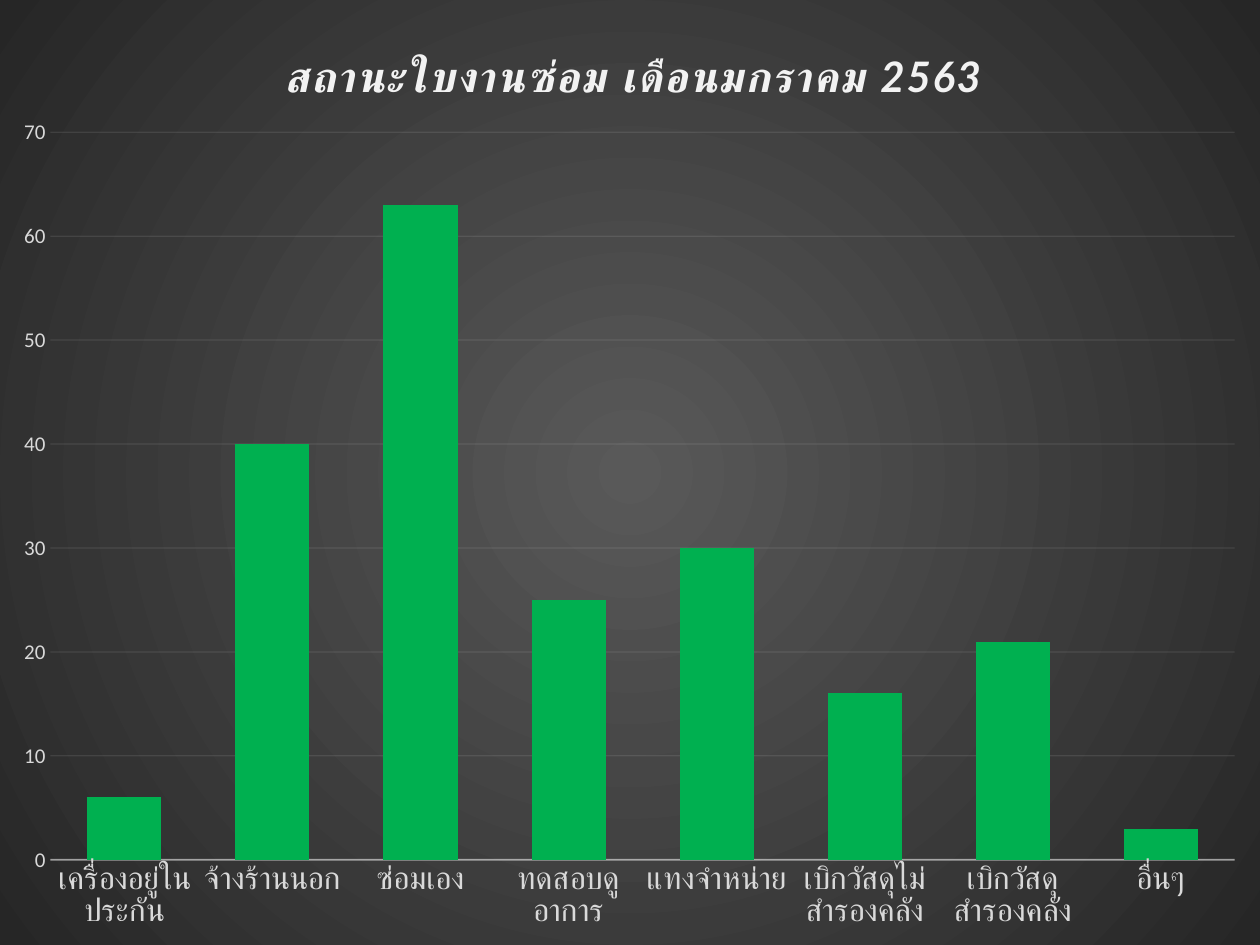
from lxml.etree import SubElement
from pptx import Presentation
from pptx.chart.data import CategoryChartData
from pptx.dml.color import RGBColor
from pptx.enum.chart import XL_CHART_TYPE as ChartType, XL_TICK_MARK as TickMark
from pptx.oxml import parse_xml
from pptx.oxml.ns import nsdecls, qn
from pptx.util import Inches, Pt

STATUS_COUNTS = {
    "เครื่องอยู่ในประกัน": 6,
    "จ้างร้านนอก": 40,
    "ซ่อมเอง": 63,
    "ทดสอบดูอาการ": 25,
    "แทงจำหน่าย": 30,
    "เบิกวัสดุไม่สำรองคลัง": 16,
    "เบิกวัสดุสำรองคลัง": 21,
    "อื่นๆ": 3,
}


def color(hex_string):
    """Return the colour for a hex string."""
    return RGBColor.from_string(hex_string)


def format_font(font, size, ink, name, bold=False, italic=False):
    """Apply a text format to a font."""
    font.size, font.name = Pt(size), name
    font.bold, font.italic = bold, italic
    font.color.rgb = color(ink)


def write_text(frame, text, spacing=0, **font_format):
    """Write one formatted run into a text frame."""
    run = frame.paragraphs[0].add_run()
    run.text = text
    format_font(run.font, **font_format)
    run.font._element.set("spc", str(spacing * 100))


def format_line(chart, line, xml_query, ink, width, opacity):
    """Format a chart line and make it partly transparent."""
    line.color.rgb = color(ink)
    line.width = Pt(width)
    for line_color in chart.element.xpath(xml_query + "//a:srgbClr"):
        SubElement(line_color, qn("a:alpha")).set("val", str(opacity * 1000))


def place_part(part, index, **fractions):
    """Fix a chart part at fractions of the chart size."""
    for old_layout in part.findall(qn("c:layout")):
        part.remove(old_layout)
    target = '<c:layoutTarget val="inner"/>' if "w" in fractions else ""
    modes = "".join(f'<c:{key}Mode val="edge"/>' for key in "xy")
    values = "".join(f'<c:{key} val="{value}"/>' for key, value in fractions.items())
    part.insert(index, parse_xml(
        f'<c:layout {nsdecls("c")}><c:manualLayout>{target}{modes}{values}'
        "</c:manualLayout></c:layout>"))


def fill_background(chart, center, edge):
    """Give the chart area a radial gradient."""
    stops = "".join(
        f'<a:gs pos="{position}"><a:srgbClr val="{ink}"/></a:gs>'
        for position, ink in ((0, center), (100000, edge)))
    chart.element.find(qn("c:chart")).addnext(parse_xml(
        f'<c:spPr {nsdecls("c", "a")}><a:gradFill><a:gsLst>{stops}</a:gsLst>'
        '<a:path path="circle"><a:fillToRect l="50000" t="50000" r="50000" b="50000"/>'
        "</a:path></a:gradFill><a:ln><a:noFill/></a:ln></c:spPr>"))


def format_axes(chart):
    """Style the status axis, the count axis and the gridlines."""
    statuses, counts = chart.category_axis, chart.value_axis
    for axis in (statuses, counts):
        axis.major_tick_mark = axis.minor_tick_mark = TickMark.NONE
    format_font(statuses.tick_labels.font, 18, "D9D9D9", "Lato")
    format_font(counts.tick_labels.font, 12, "D9D9D9", "Calibri")
    counts.minimum_scale, counts.maximum_scale, counts.major_unit = 0, 70, 10
    counts.format.line.fill.background()
    format_line(chart, statuses.format.line, ".//c:catAx/c:spPr", "F2F2F2", 1, 54)
    format_line(chart, counts.major_gridlines.format.line,
                ".//c:majorGridlines", "F2F2F2", 0.75, 10)


def add_status_chart(slide, left, top, width, height):
    """Add the column chart of repair job statuses in the given box."""
    data = CategoryChartData()
    data.categories = STATUS_COUNTS.keys()
    data.add_series("Series 1", STATUS_COUNTS.values())
    chart = slide.shapes.add_chart(
        ChartType.COLUMN_CLUSTERED, left, top, width, height, data).chart
    format_font(chart.font, 10, "000000", "Calibri")
    fill_background(chart, "595959", "262626")
    chart.has_legend = False

    chart.has_title = True
    title = chart.chart_title
    write_text(title.text_frame, "สถานะใบงานซ่อม เดือนมกราคม 2563", spacing=1,
               size=24, ink="F2F2F2", name="Lato", bold=True, italic=True)
    title.include_in_layout = False
    place_part(title.element, 1, x=0.22, y=0.04)

    plot = chart.plots[0]
    plot.gap_width, plot.overlap, plot.vary_by_categories = 100, -24, False
    fill = plot.series[0].format.fill
    fill.solid()
    fill.fore_color.rgb = color("00B050")
    format_axes(chart)
    plot_area = chart.element.find(qn("c:chart")).find(qn("c:plotArea"))
    place_part(plot_area, 0, x=0.04, y=0.14, w=0.94, h=0.77)


def main():
    """Build and save the slide."""
    deck = Presentation()
    deck.slide_width, deck.slide_height = Inches(10), Inches(7.5)
    slide = deck.slides.add_slide(deck.slide_layouts[6])
    add_status_chart(slide, Inches(0), Inches(0), Inches(10), Inches(7.5))
    deck.save("out.pptx")


if __name__ == "__main__":
    main()
